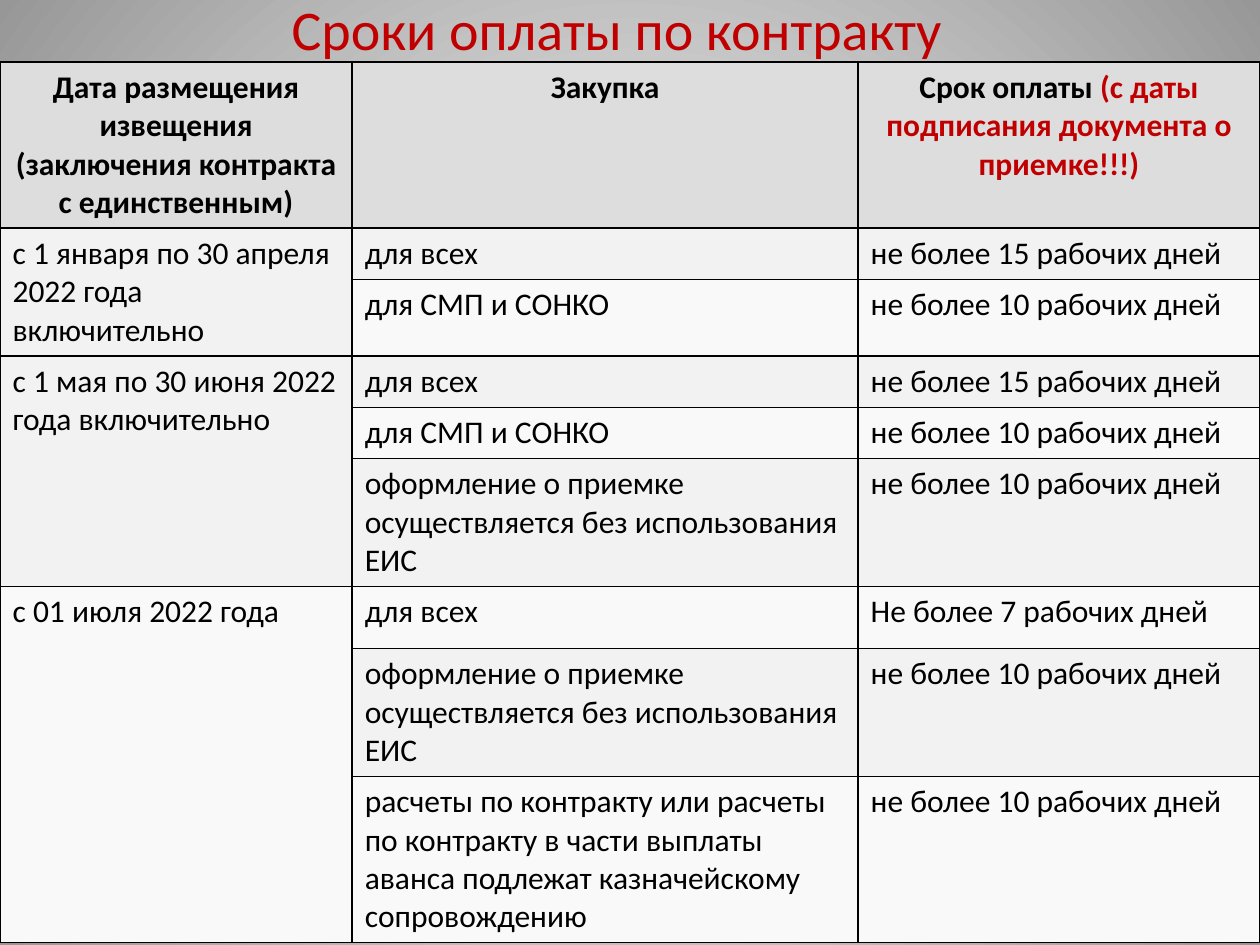
from dataclasses import dataclass

from pptx import Presentation
from pptx.dml.color import RGBColor
from pptx.enum.text import MSO_ANCHOR, PP_ALIGN
from pptx.oxml import parse_xml
from pptx.oxml.ns import nsdecls
from pptx.util import Cm, Pt

CENTER, LEFT = PP_ALIGN.CENTER, PP_ALIGN.LEFT
TOP = MSO_ANCHOR.TOP


@dataclass(frozen=True)
class Theme:
    font: str = "Calibri"
    title_size: int = 32
    table_size: int = 18
    accent: str = "C00000"
    ink: str = "000000"
    header_fill: str = "DDDDDD"
    band_fills: tuple = ("F2F2F2", "F9F9F9")
    glow: str = "FFFFFF"
    edge: str = "979797"
    border_width: int = 1


THEME = Theme()

FOR_ALL = "для всех"
SMALL_BUSINESS = "для СМП и СОНКО"
OUTSIDE_SYSTEM = "оформление о приемке осуществляется без использования ЕИС"
TREASURY = ("расчеты по контракту или расчеты по контракту в части выплаты "
            "аванса подлежат казначейскому\nсопровождению")
TEN_DAYS = "не более 10 рабочих дней"
FIFTEEN_DAYS = "не более 15 рабочих дней"

HEADINGS = [
    [("Дата размещения извещения (заключения контракта с единственным)", THEME.ink)],
    [("Закупка", THEME.ink)],
    [("Срок оплаты ", THEME.ink),
     ("(с даты подписания документа о приемке!!!)", THEME.accent)],
]
PERIODS = [
    ("с 1 января по 30 апреля 2022 года включительно",
     [(FOR_ALL, FIFTEEN_DAYS), (SMALL_BUSINESS, TEN_DAYS)]),
    ("с 1 мая по 30 июня 2022 года включительно",
     [(FOR_ALL, FIFTEEN_DAYS), (SMALL_BUSINESS, TEN_DAYS), (OUTSIDE_SYSTEM, TEN_DAYS)]),
    ("с 01 июля 2022 года",
     [(FOR_ALL, "Не более 7 рабочих дней"), (OUTSIDE_SYSTEM, TEN_DAYS),
      (TREASURY, TEN_DAYS)]),
]
COLUMN_WIDTHS = [7.1, 10.2, 8.1]
ROW_HEIGHTS = [3.35, 1.03, 1.55, 1.03, 1.03, 2.58, 1.25, 2.58, 3.35]


def apply(target, values):
    for name, value in values.items():
        setattr(target, name, value)


def write_runs(paragraph, pieces, size, bold, align):
    paragraph.alignment = align
    for text, color in pieces:
        run = paragraph.add_run()
        run.text = text
        apply(run.font, {"name": THEME.font, "size": Pt(size), "bold": bold})
        run.font.color.rgb = RGBColor.from_string(color)


def paint_background(slide):
    stops = "".join(
        f'<a:gs pos="{position}"><a:srgbClr val="{color}"/></a:gs>'
        for position, color in ((0, THEME.glow), (100000, THEME.edge)))
    slide.element.cSld.insert(0, parse_xml(
        f'<p:bg {nsdecls("p", "a")}><p:bgPr><a:gradFill rotWithShape="1">'
        f'<a:gsLst>{stops}</a:gsLst><a:path path="circle">'
        '<a:fillToRect l="50000" t="50000" r="50000" b="50000"/></a:path>'
        '</a:gradFill><a:effectLst/></p:bgPr></p:bg>'))


def add_title(slide, left, top, width, height):
    frame = slide.shapes.add_textbox(Cm(left), Cm(top), Cm(width), Cm(height)).text_frame
    apply(frame, {"margin_left": 0, "margin_right": 0, "margin_top": 0,
                  "margin_bottom": 0, "word_wrap": True, "vertical_anchor": TOP})
    heading = frame.paragraphs[0]
    heading.line_spacing = 0.9
    write_runs(heading, [("Сроки оплаты по контракту", THEME.accent)],
               THEME.title_size, False, CENTER)


def style_cell(cell, fill):
    properties = cell._tc.get_or_add_tcPr()
    for side in ("lnL", "lnR", "lnT", "lnB"):
        properties.append(parse_xml(
            f'<a:{side} {nsdecls("a")} w="{Pt(THEME.border_width)}"><a:solidFill>'
            f'<a:srgbClr val="{THEME.ink}"/></a:solidFill></a:{side}>'))
    cell.fill.solid()
    cell.fill.fore_color.rgb = RGBColor.from_string(fill)
    cell.vertical_anchor = TOP


def write_cell(cell, text):
    frame = cell.text_frame
    for index, line in enumerate(text.split("\n")):
        paragraph = frame.add_paragraph() if index else frame.paragraphs[0]
        write_runs(paragraph, [(line, THEME.ink)], THEME.table_size, False, LEFT)


def add_terms_table(slide, left, top, width, height):
    table = slide.shapes.add_table(
        len(ROW_HEIGHTS), len(COLUMN_WIDTHS),
        Cm(left), Cm(top), Cm(width), Cm(height)).table
    apply(table, {"first_row": False, "horz_banding": False})
    for column, share in zip(table.columns, COLUMN_WIDTHS):
        column.width = Cm(width * share / sum(COLUMN_WIDTHS))
    for row_index, (row, share) in enumerate(zip(table.rows, ROW_HEIGHTS)):
        row.height = Cm(height * share / sum(ROW_HEIGHTS))
        fill = THEME.band_fills[(row_index - 1) % 2] if row_index else THEME.header_fill
        for cell in row.cells:
            style_cell(cell, fill)

    for column_index, pieces in enumerate(HEADINGS):
        write_runs(table.cell(0, column_index).text_frame.paragraphs[0],
                   pieces, THEME.table_size, True, CENTER)

    first = 1
    for period, terms in PERIODS:
        last = first + len(terms) - 1
        table.cell(first, 0).merge(table.cell(last, 0))
        write_cell(table.cell(first, 0), period)
        for row_index, (purchase, deadline) in enumerate(terms, first):
            write_cell(table.cell(row_index, 1), purchase)
            write_cell(table.cell(row_index, 2), deadline)
        first = last + 1


def main():
    deck = Presentation()
    apply(deck, {"slide_width": Cm(25.4), "slide_height": Cm(19.05)})
    slide = deck.slides.add_slide(deck.slide_layouts[6])
    paint_background(slide)
    add_title(slide, 1.3, 0.05, 22.28, 1.22)
    add_terms_table(slide, 0, 1.25, sum(COLUMN_WIDTHS), sum(ROW_HEIGHTS))
    deck.save("out.pptx")


if __name__ == "__main__":
    main()
